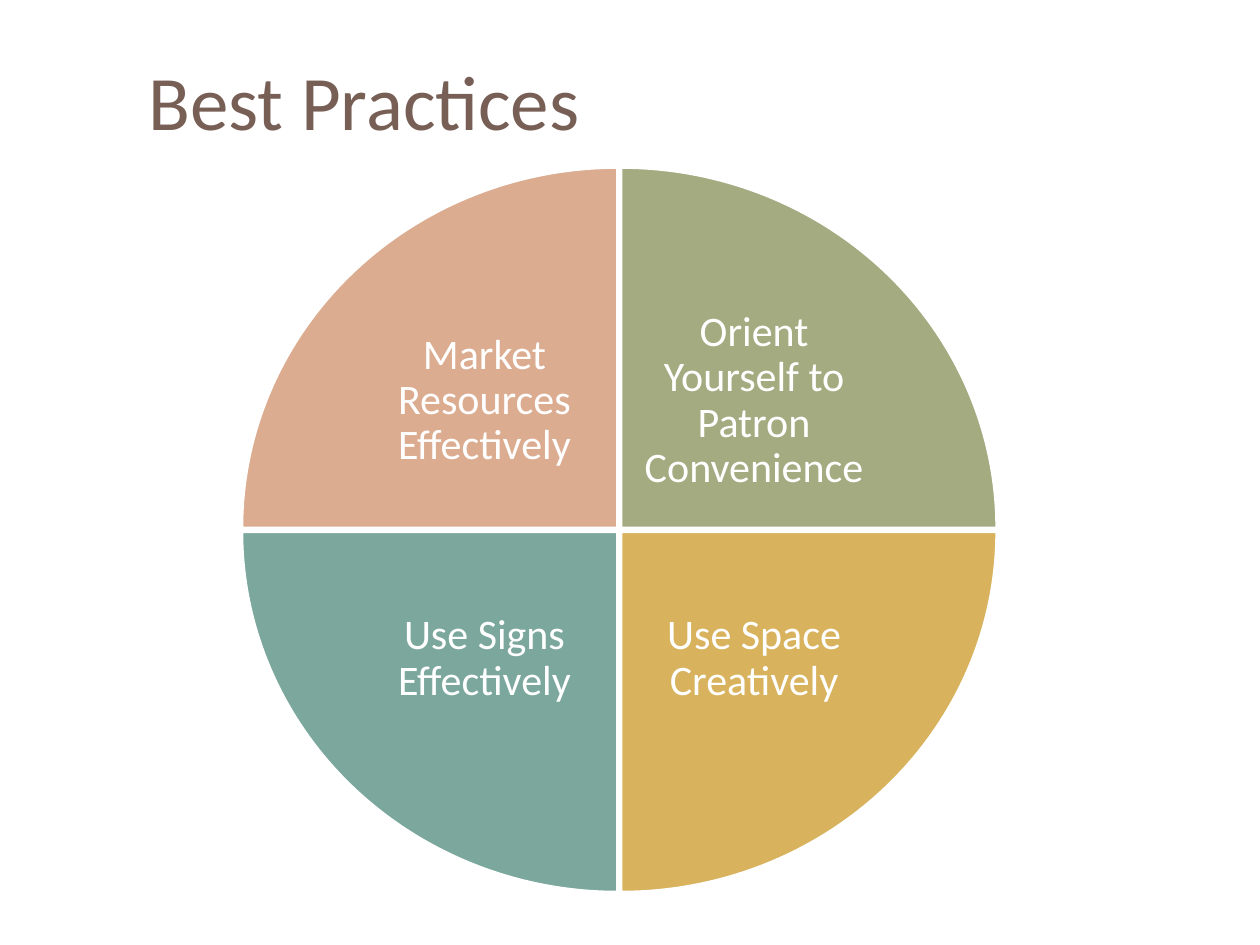
import pptx
import pptx.util
import pptx.dml.color
import pptx.enum.shapes
import pptx.enum.text
import pptx.oxml.ns
import lxml.etree

Inches, Pt = pptx.util.Inches, pptx.util.Pt
MSO_ANCHOR = pptx.enum.text.MSO_ANCHOR
PP_ALIGN = pptx.enum.text.PP_ALIGN

TITLE = "Best Practices"
COLORS = {"title": "775F55", "white": "FFFFFF", "rust": "B95B22",
          "sage": "A5AB81", "gold": "D8B25C", "teal": "7BA79D"}
QUADRANTS = [
    ("Market Resources Effectively", "rust", 0, 0, 50),
    ("Orient Yourself to Patron Convenience", "sage", 1, 0, 100),
    ("Use Space Creatively", "gold", 1, 1, 100),
    ("Use Signs Effectively", "teal", 0, 1, 100),
]
FONT = "Calibri"
WIDTH, HEIGHT = 10, 7.5
LEFT, TOP, GAP = 1.92, 1.33, 0.03
WEDGE_W, WEDGE_H = 2.98, 2.86
LABEL_W, LABEL_H = 2.11, 2.02
INSET = 0.17


def rgb(name):
    return pptx.dml.color.RGBColor.from_string(COLORS[name])


def style(p, size, color):
    p.font.name, p.font.size = FONT, Pt(size)
    p.font.color.rgb = rgb(color)


def add_wedge(s, color, x, y, turn, opacity):
    w, h = (WEDGE_H, WEDGE_W) if turn % 2 else (WEDGE_W, WEDGE_H)
    sp = s.shapes.add_shape(
        pptx.enum.shapes.MSO_SHAPE.PIE_WEDGE,
        Inches(x + (WEDGE_W - w) / 2), Inches(y + (WEDGE_H - h) / 2),
        Inches(w), Inches(h))
    sp.rotation = 90 * turn
    sp.shadow.inherit = False
    sp.fill.solid()
    sp.fill.fore_color.rgb = rgb(color)
    sp.line.color.rgb = rgb("white")
    sp.line.width = Pt(1.5)
    if opacity < 100:
        qn = pptx.oxml.ns.qn
        fill = sp.element.spPr.find(qn("a:solidFill"))
        lxml.etree.SubElement(fill[0], qn("a:alpha"), val=str(opacity * 1000))


def add_label(s, text, x, y):
    sp = s.shapes.add_textbox(Inches(x), Inches(y), Inches(LABEL_W), Inches(LABEL_H))
    tf = sp.text_frame
    tf.word_wrap = True
    tf.vertical_anchor = MSO_ANCHOR.MIDDLE
    tf.margin_left = tf.margin_right = tf.margin_top = tf.margin_bottom = Inches(INSET)
    p = tf.paragraphs[0]
    p.text = text
    p.alignment = PP_ALIGN.CENTER
    p.line_spacing = 0.9
    style(p, 24, "white")


def main():
    prs = pptx.Presentation()
    prs.slide_width, prs.slide_height = Inches(WIDTH), Inches(HEIGHT)
    s = prs.slides.add_slide(prs.slide_layouts[5])

    title = s.shapes.title
    title.left, title.top = Inches(1.08), Inches(0.25)
    title.width, title.height = Inches(8.92), Inches(1.08)
    title.text_frame.text = TITLE
    title.text_frame.vertical_anchor = MSO_ANCHOR.MIDDLE
    p = title.text_frame.paragraphs[0]
    p.alignment = PP_ALIGN.LEFT
    style(p, 44, "title")

    for turn, (text, color, col, row, opacity) in enumerate(QUADRANTS):
        x = LEFT + col * (WEDGE_W + GAP)
        y = TOP + row * (WEDGE_H + GAP)
        add_wedge(s, color, x, y, turn, opacity)
        add_label(s, text, x + (1 - col) * (WEDGE_W - LABEL_W),
                  y + (1 - row) * (WEDGE_H - LABEL_H))

    prs.save("out.pptx")


if __name__ == "__main__":
    main()
